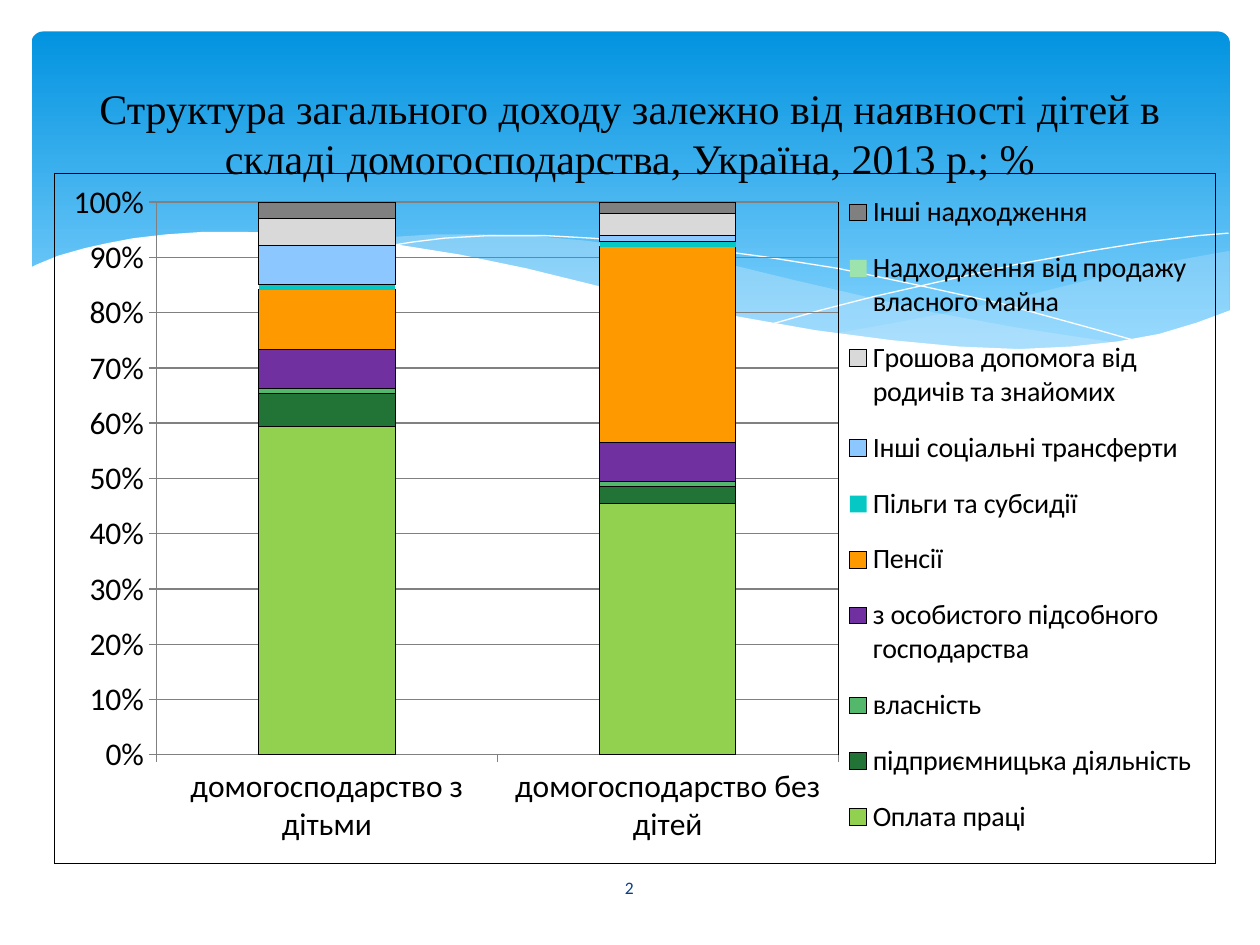
"""Build a slide with a stacked chart of household income structure."""
from typing import Any, NamedTuple, Optional

from pptx import Presentation
from pptx.chart.data import CategoryChartData
from pptx.dml.color import RGBColor
from pptx.enum.chart import XL_CHART_TYPE, XL_LEGEND_POSITION, XL_TICK_MARK
from pptx.enum.shapes import MSO_SHAPE
from pptx.enum.text import MSO_ANCHOR, PP_ALIGN
from pptx.oxml import parse_xml
from pptx.oxml.ns import nsdecls, qn
from pptx.util import Inches, Pt

STACKED = XL_CHART_TYPE.COLUMN_STACKED_100
LEGEND_RIGHT = XL_LEGEND_POSITION.RIGHT
TICK_OUTSIDE = XL_TICK_MARK.OUTSIDE
ROUNDED = MSO_SHAPE.ROUNDED_RECTANGLE
MIDDLE = MSO_ANCHOR.MIDDLE
CENTER = PP_ALIGN.CENTER

WHITE = RGBColor(0xFF, 0xFF, 0xFF)
BLACK = RGBColor(0x00, 0x00, 0x00)
GRID = RGBColor(0x80, 0x80, 0x80)
SKY_DARK = RGBColor(0x02, 0x93, 0xE0)
SKY_LIGHT = RGBColor(0x83, 0xD3, 0xFE)
MIST = RGBColor(0xC6, 0xE7, 0xFC)
NAVY = RGBColor(0x07, 0x3E, 0x87)
LIME = RGBColor(0x92, 0xD0, 0x50)
FOREST = RGBColor(0x21, 0x74, 0x36)
GREEN = RGBColor(0x54, 0xB8, 0x6C)
PURPLE = RGBColor(0x70, 0x30, 0xA0)
ORANGE = RGBColor(0xFF, 0x99, 0x00)
TEAL = RGBColor(0x05, 0xC8, 0xC5)
LIGHT_BLUE = RGBColor(0x8C, 0xC8, 0xFF)
LIGHT_GRAY = RGBColor(0xD9, 0xD9, 0xD9)
PALE_GREEN = RGBColor(0x9C, 0xE3, 0xAE)

TITLE = ("Структура загального доходу залежно від наявності дітей в складі "
         "домогосподарства, Україна, 2013\u00a0р.; %")
CATEGORIES = ("домогосподарство з дiтьми", "домогосподарство без дiтей")


class Wave(NamedTuple):
    """Curve of the header; without a fill it is an open white line."""
    points: tuple[tuple[float, float], ...]
    fill: Optional[RGBColor] = None
    opacity: int = 100


class Income(NamedTuple):
    """Income source with its share in each household type."""
    name: str
    shares: tuple[int, int]
    color: RGBColor
    outlined: bool = True


WAVES = (
    Wave(((9.76, 1.99), (9.48, 2.04), (9.21, 2.09), (8.91, 2.16), (8.61, 2.23),
          (8.05, 2.37), (7.53, 2.48), (7.06, 2.57), (6.61, 2.65), (6.91, 2.69),
          (7.32, 2.74), (7.69, 2.77), (8.03, 2.78), (8.35, 2.77), (8.72, 2.74),
          (9.05, 2.69), (9.35, 2.61), (9.63, 2.52), (9.76, 2.47)), MIST, 29),
    Wave(((8.93, 2.73), (8.66, 2.69), (8.07, 2.6), (7.41, 2.48), (6.68, 2.31),
          (6.29, 2.22), (5.84, 2.11), (5.41, 2.03), (5.01, 1.96), (4.65, 1.91),
          (4.2, 1.87), (3.8, 1.86), (3.44, 1.86), (3.13, 1.88), (2.86, 1.91),
          (3.23, 1.96), (3.62, 2.03), (4.04, 2.11), (4.49, 2.22), (4.91, 2.32),
          (5.3, 2.4), (5.84, 2.52), (6.34, 2.61), (6.8, 2.68), (7.22, 2.74),
          (7.61, 2.77), (7.96, 2.78), (8.28, 2.78), (8.57, 2.77)), MIST, 40),
    Wave(((3.09, 1.95), (3.28, 1.92), (3.53, 1.89), (3.87, 1.87), (4.33, 1.87),
          (4.69, 1.89), (5.1, 1.92), (5.56, 1.97), (6.08, 2.04), (6.65, 2.13),
          (7.27, 2.26), (7.95, 2.41), (8.68, 2.61), (9.07, 2.72))),
    Wave(((6.13, 2.57), (6.52, 2.46), (6.95, 2.35), (7.48, 2.23), (8.06, 2.1),
          (8.66, 1.99), (9.1, 1.92), (9.51, 1.87), (9.75, 1.85))),
    Wave(((9.77, 2.46), (9.5, 2.56), (9.2, 2.65), (8.87, 2.71), (8.5, 2.75),
          (8.09, 2.77), (7.61, 2.75), (7.08, 2.7), (6.47, 2.62), (5.79, 2.5),
          (5.29, 2.39), (4.75, 2.27), (4.18, 2.13), (3.65, 2.02), (3.15, 1.94),
          (2.71, 1.88), (2.3, 1.85), (1.93, 1.84), (1.61, 1.84), (1.32, 1.86),
          (1.06, 1.89), (0.85, 1.93), (0.67, 1.97), (0.46, 2.03), (0.29, 2.1),
          (0.23, 2.13), (0.23, 3.29), (9.77, 3.29)), WHITE),
)
INCOMES = (
    Income("Оплата праці", (60, 45), LIME),
    Income("підприємницька діяльність", (6, 3), FOREST),
    Income("власність", (1, 1), GREEN),
    Income("з особистого підсобного господарства", (7, 7), PURPLE),
    Income("Пенсії", (11, 35), ORANGE),
    Income("Пільги та субсидії", (1, 1), TEAL, False),
    Income("Інші соціальні трансферти", (7, 1), LIGHT_BLUE),
    Income("Грошова допомога від родичів та знайомих", (5, 4), LIGHT_GRAY),
    Income("Надходження від продажу власного майна", (0, 0), PALE_GREEN, False),
    Income("Інші надходження", (3, 2), GRID),
)


def format_font(font: Any, name: str, size: float, color: RGBColor) -> None:
    """Set the typeface, size and colour of a font."""
    for attribute, value in {"name": name, "size": Pt(size), "bold": False}.items():
        setattr(font, attribute, value)
    font.color.rgb = color


def draw_line(line: Any, color: RGBColor, width: float) -> None:
    """Give a line its colour and width in points."""
    line.color.rgb = color
    line.width = Pt(width)


def write_text(shape: Any, text: str, name: str, size: float, color: RGBColor) -> None:
    """Write one centred paragraph in a shape."""
    frame = shape.text_frame
    for attribute, value in {"word_wrap": True, "vertical_anchor": MIDDLE}.items():
        setattr(frame, attribute, value)
    paragraph = frame.paragraphs[0]
    paragraph.alignment = CENTER
    run = paragraph.add_run()
    run.text = text
    format_font(run.font, name, size, color)


def add_header(slide: Any) -> None:
    """Draw the rounded gradient panel behind the title."""
    panel = slide.shapes.add_shape(
        ROUNDED, Inches(0.25), Inches(0.25), Inches(9.51), Inches(2.7))
    panel.adjustments[0] = 0.034
    panel.shadow.inherit = False
    panel.line.fill.background()
    panel.fill.gradient()
    panel.fill.gradient_angle = 270
    for stop, color, position in zip(panel.fill.gradient_stops, (SKY_DARK, SKY_LIGHT), (0, 0.9)):
        stop.color.rgb = color
        stop.position = position


def add_wave(slide: Any, wave: Wave) -> None:
    """Draw a filled wave or an open white curve."""
    start, *others = [(Inches(x), Inches(y)) for x, y in wave.points]
    builder = slide.shapes.build_freeform(*start)
    builder.add_line_segments(others, close=wave.fill is not None)
    shape = builder.convert_to_shape()
    shape.shadow.inherit = False
    if wave.fill is None:
        shape.fill.background()
        draw_line(shape.line, WHITE, 0)
        return
    shape.line.fill.background()
    shape.fill.solid()
    shape.fill.fore_color.rgb = wave.fill
    if wave.opacity < 100:
        color = shape.element.spPr.find(".//" + qn("a:srgbClr"))
        color.append(parse_xml(f'<a:alpha {nsdecls("a")} val="{wave.opacity * 1000}"/>'))


def make_layout(x: float, y: float, width: float, height: float, inner: bool = False) -> Any:
    """Return a manual chart layout in fractions of the chart."""
    values = {"layoutTarget": "inner"} if inner else {}
    values |= {"xMode": "edge", "yMode": "edge", "x": x, "y": y, "w": width, "h": height}
    body = "".join(f'<c:{key} val="{value}"/>' for key, value in values.items())
    return parse_xml(f'<c:layout {nsdecls("c")}><c:manualLayout>{body}</c:manualLayout></c:layout>')


def make_frame(color: RGBColor) -> Any:
    """Return unfilled chart shape properties with a hairline border."""
    return parse_xml(
        f'<c:spPr {nsdecls("c", "a")}><a:noFill/><a:ln w="0"><a:solidFill>'
        f'<a:srgbClr val="{color}"/></a:solidFill></a:ln></c:spPr>')


def add_income_chart(slide: Any) -> None:
    """Add the chart of income shares with its legend."""
    data = CategoryChartData(number_format="0.0")
    data.categories = CATEGORIES
    for income in INCOMES:
        data.add_series(income.name, income.shares)
    chart = slide.shapes.add_chart(
        STACKED, Inches(0.43), Inches(1.38), Inches(9.22), Inches(5.47), data).chart
    format_font(chart.font, "Calibri", 18, BLACK)
    chart.has_title = False
    chart.has_legend = True
    chart.legend.position = LEGEND_RIGHT
    chart.legend.include_in_layout = False
    format_font(chart.legend.font, "Calibri", 16, BLACK)
    plot = chart.plots[0]
    for attribute, value in {"gap_width": 150, "overlap": 100, "vary_by_categories": False}.items():
        setattr(plot, attribute, value)
    for series, income in zip(plot.series, INCOMES):
        series.format.fill.solid()
        series.format.fill.fore_color.rgb = income.color
        if income.outlined:
            draw_line(series.format.line, BLACK, 0)
    for axis in (chart.category_axis, chart.value_axis):
        axis.major_tick_mark = TICK_OUTSIDE
        draw_line(axis.format.line, GRID, 0.75)
    axis = chart.value_axis
    axis.tick_labels.number_format = "0%"
    axis.tick_labels.number_format_is_linked = False
    draw_line(axis.major_gridlines.format.line, GRID, 0.75)
    root = chart.element
    area = root.chart.plotArea
    for layout in area.findall(qn("c:layout")):
        area.remove(layout)
    area.insert(0, make_layout(0.088, 0.041, 0.587, 0.802, True))
    area.append(make_frame(BLACK))
    root.find(".//" + qn("c:legendPos")).addnext(make_layout(0.677, 0, 0.31, 0.99))
    root.chart.addnext(make_frame(BLACK))


def main() -> None:
    """Build the slide and save it."""
    presentation = Presentation()
    presentation.slide_width, presentation.slide_height = Inches(10), Inches(7.5)
    slide = presentation.slides.add_slide(presentation.slide_layouts[5])
    add_header(slide)
    for wave in WAVES:
        add_wave(slide, wave)
    add_income_chart(slide)
    title = slide.shapes.title
    bounds = {"left": 0.5, "top": 0.37, "width": 9, "height": 1.37}
    for attribute, value in bounds.items():
        setattr(title, attribute, Inches(value))
    title.element.getparent().append(title.element)
    write_text(title, TITLE, "Times New Roman", 24, BLACK)
    number = slide.shapes.add_textbox(Inches(4.36), Inches(6.84), Inches(1.27), Inches(0.4))
    write_text(number, "2", "Calibri", 10, NAVY)
    presentation.save("out.pptx")


if __name__ == "__main__":
    main()
